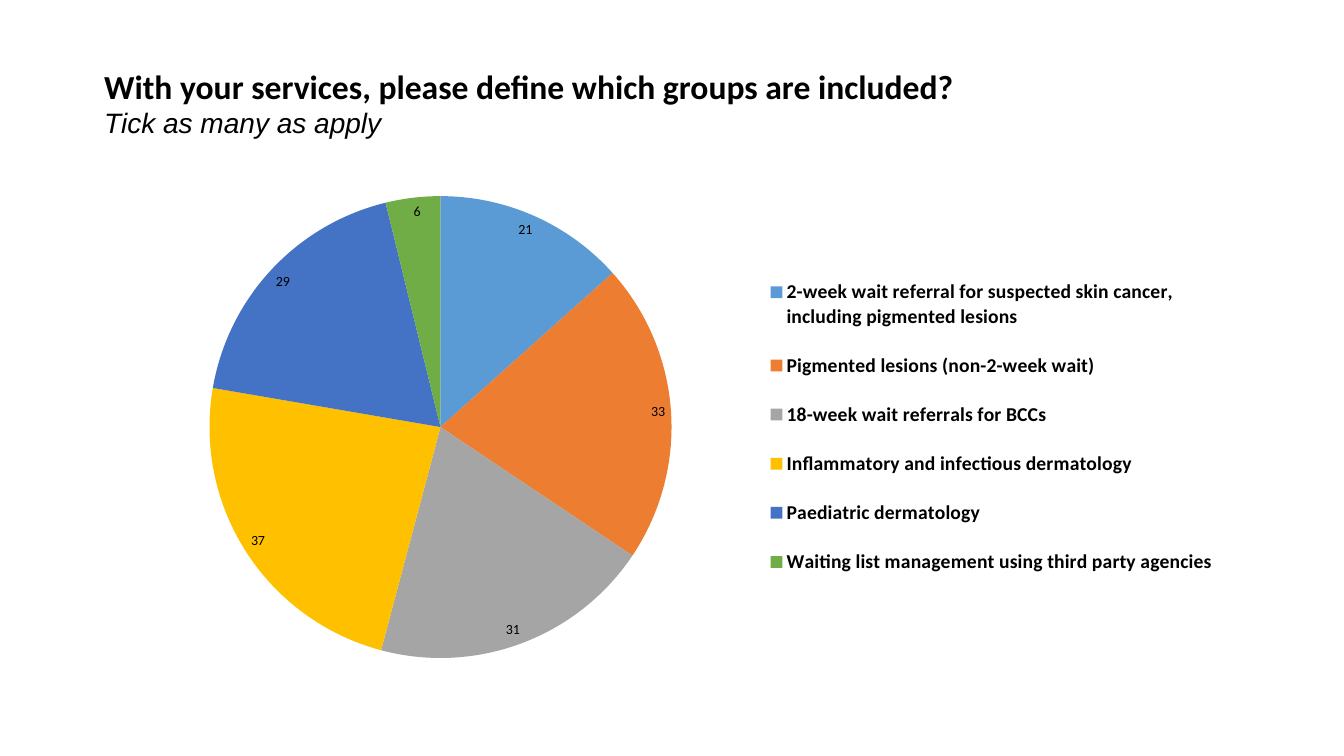
from dataclasses import dataclass

from lxml.etree import SubElement
from pptx import Presentation
from pptx.chart.chart import Chart
from pptx.chart.data import CategoryChartData
from pptx.dml.color import RGBColor
from pptx.enum.chart import XL_CHART_TYPE, XL_LABEL_POSITION, XL_LEGEND_POSITION
from pptx.enum.text import MSO_ANCHOR, MSO_AUTO_SIZE, PP_ALIGN
from pptx.oxml.ns import qn
from pptx.shapes.autoshape import Shape
from pptx.slide import Slide
from pptx.util import Inches, Pt

BLACK = RGBColor(0x00, 0x00, 0x00)
BLUE = RGBColor(0x5B, 0x9B, 0xD5)
ORANGE = RGBColor(0xED, 0x7D, 0x31)
GREY = RGBColor(0xA5, 0xA5, 0xA5)
GOLD = RGBColor(0xFF, 0xC0, 0x00)
NAVY = RGBColor(0x44, 0x72, 0xC4)
GREEN = RGBColor(0x70, 0xAD, 0x47)

WIDTH, HEIGHT = Inches(13.33), Inches(7.5)


@dataclass
class Line:
    text: str
    size: int
    font: str
    bold: bool = False
    italic: bool = False


@dataclass
class Group:
    name: str
    count: int
    color: RGBColor


@dataclass
class Box:
    """Shares of the width and height of the parent."""
    x: float
    y: float
    w: float
    h: float

    def place(self) -> tuple[int, int, int, int]:
        return (int(self.x * WIDTH), int(self.y * HEIGHT),
                int(self.w * WIDTH), int(self.h * HEIGHT))


LINES = [
    Line("With your services, please define which groups are included?",
         24, "Calibri", bold=True),
    Line("Tick as many as apply", 20, "Arial", italic=True),
]
GROUPS = [
    Group("2-week wait referral for suspected skin cancer, "
          "including pigmented lesions", 21, BLUE),
    Group("Pigmented lesions (non-2-week wait)", 33, ORANGE),
    Group("18-week wait referrals for BCCs", 31, GREY),
    Group("Inflammatory and infectious dermatology", 37, GOLD),
    Group("Paediatric dermatology", 29, NAVY),
    Group("Waiting list management using third party agencies", 6, GREEN),
]

# Title and chart on the slide, pie and legend within the chart
HEAD = Box(0.07, 0.08, 0.7, 0.11)
FRAME = Box(0.09, 0.24, 0.82, 0.65)
PIE = Box(0.08, 0.03, 0.42, 0.94)
KEY = Box(0.58, 0.15, 0.42, 0.7)


def write_title(title: Shape, lines: list[Line]) -> None:
    title.left, title.top, title.width, title.height = HEAD.place()
    frame = title.text_frame
    frame.word_wrap = True
    frame.auto_size = MSO_AUTO_SIZE.NONE
    frame.vertical_anchor = MSO_ANCHOR.TOP
    frame.text = "\n".join(line.text for line in lines)
    for para, line in zip(frame.paragraphs, lines):
        para.alignment = PP_ALIGN.LEFT
        font = para.font
        font.name, font.size = line.font, Pt(line.size)
        font.bold, font.italic = line.bold, line.italic
        font.color.rgb = BLACK


def set_layout(part, box: Box, inner: bool = False) -> None:
    """Fix a chart part at shares of the chart's size."""
    layout = part.find(qn("c:layout"))
    if layout is None:
        layout = SubElement(part, qn("c:layout"))
        spot = 1 if part.find(qn("c:legendPos")) is not None else 0
        part.insert(spot, layout)
    manual = SubElement(layout, qn("c:manualLayout"))
    rules = [("layoutTarget", "inner")] if inner else []
    rules += [("xMode", "edge"), ("yMode", "edge")]
    rules += [(key, str(getattr(box, key))) for key in "xywh"]
    for tag, value in rules:
        SubElement(manual, qn(f"c:{tag}")).set("val", value)


def add_pie(slide: Slide, groups: list[Group]) -> Chart:
    data = CategoryChartData()
    data.categories = [group.name for group in groups]
    data.add_series("Series 1", [group.count for group in groups])
    chart = slide.shapes.add_chart(XL_CHART_TYPE.PIE, *FRAME.place(), data).chart
    chart.has_title = False
    chart.font.name, chart.font.size = "Calibri", Pt(10)
    chart.font.color.rgb = BLACK

    # Slices
    plot = chart.plots[0]
    plot.vary_by_categories = True
    for i, group in enumerate(groups):
        fill = plot.series[0].points[i].format.fill
        fill.solid()
        fill.fore_color.rgb = group.color

    # Values at the rim
    plot.has_data_labels = True
    plot.data_labels.show_value = True
    plot.data_labels.show_percentage = False
    plot.data_labels.position = XL_LABEL_POSITION.INSIDE_END
    return chart


def add_key(chart: Chart) -> None:
    chart.has_legend = True
    legend = chart.legend
    legend.position = XL_LEGEND_POSITION.RIGHT
    legend.include_in_layout = False
    font = legend.font
    font.name, font.size, font.bold = "Calibri", Pt(14), True
    font.color.rgb = BLACK
    area = chart.element.find(".//" + qn("c:plotArea"))
    set_layout(area, PIE, inner=True)
    set_layout(chart.element.find(".//" + qn("c:legend")), KEY)


def main() -> None:
    deck = Presentation()
    deck.slide_width, deck.slide_height = WIDTH, HEIGHT
    slide = deck.slides.add_slide(deck.slide_layouts.get_by_name("Title Only"))
    write_title(slide.shapes.title, LINES)
    add_key(add_pie(slide, GROUPS))
    deck.save("out.pptx")


if __name__ == "__main__":
    main()
